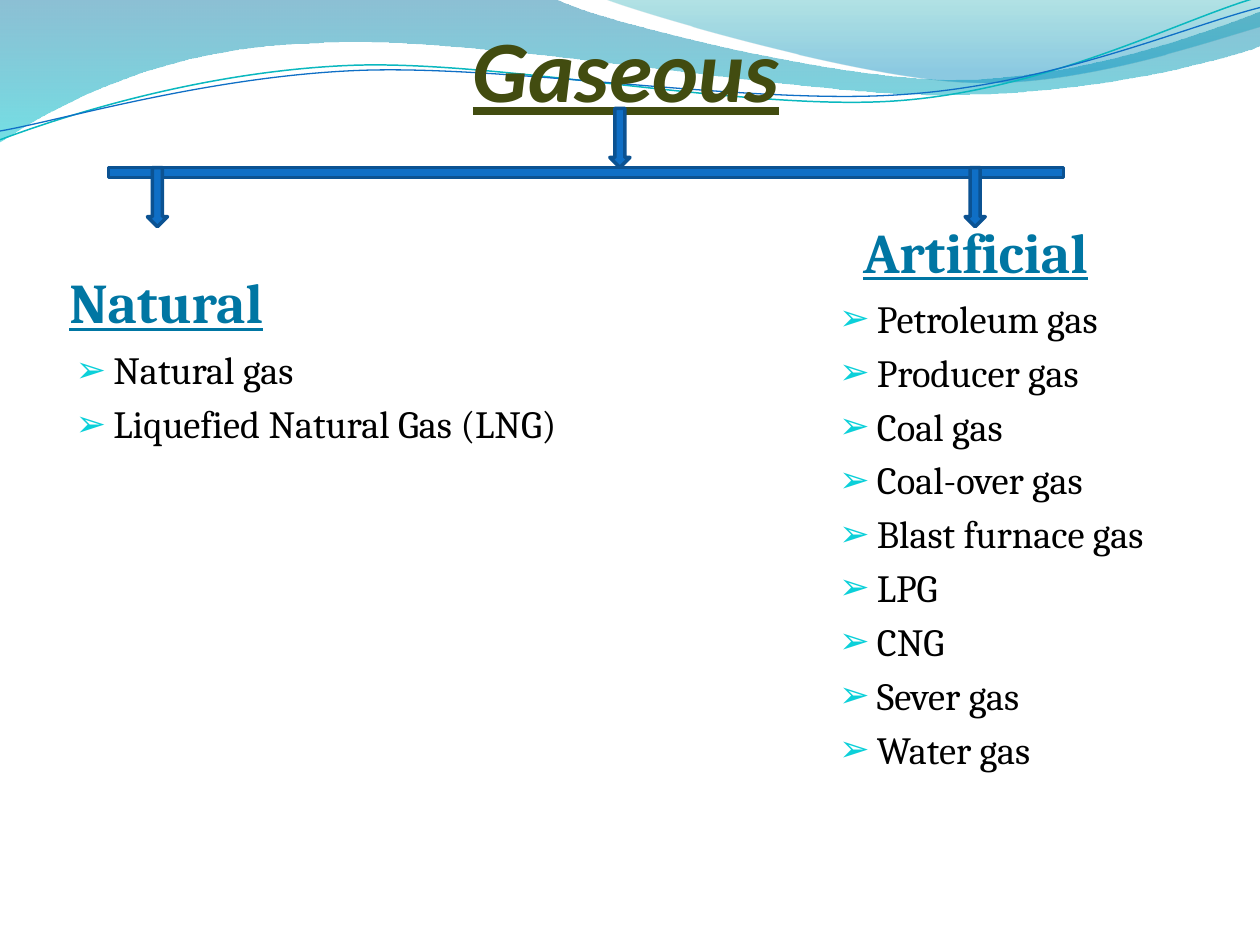
from dataclasses import dataclass

from lxml import etree
from pptx import Presentation
from pptx import util as u
from pptx.dml.color import RGBColor
from pptx.enum import shapes, text
from pptx.oxml.ns import qn


@dataclass(frozen=True)
class Theme:
    """Colours, fonts and type sizes of the slide."""
    title: str = "424C10"
    heading: str = "0076A3"
    body: str = "000000"
    bullet: str = "0BD0D9"
    bar: str = "0F6FC6"
    bar_edge: str = "0B5292"
    teal: str = "0AB8BF"
    title_font: str = "Calibri"
    body_font: str = "Cambria"
    title_size: float = 50
    heading_size: float = 32
    body_size: float = 22
    edge_width: float = 2


@dataclass(frozen=True)
class Box:
    """A region in grid columns and rows."""
    left: float
    top: float
    width: float
    height: float


THEME = Theme()
COLUMNS, ROWS = 10, 7.5
SLIDE_WIDTH, SLIDE_HEIGHT = u.Inches(10), u.Inches(7.5)
COLUMN, ROW = SLIDE_WIDTH / COLUMNS, SLIDE_HEIGHT / ROWS

GRADIENT_WAVES = [
    ([("0074A1", 45, 0), ("00C6CF", 55, 1)], (0, 0), [
        [(4.4, -0.01)],
        [(4.76, 0.17), (6.64, 0.63), (7.58, 0.63)],
        [(8.53, 0.63), (9.58, 0.26), (10, 0.09)],
        [(10.01, 0.36)],
        [(9.83, 0.44), (8.7, 0.76), (7.46, 0.75)],
        [(6.22, 0.75), (3.82, 0.28), (2.57, 0.34)],
        [(1.29, 0.36), (0.46, 0.83), (-0.01, 1.13)]]),
    ([("00A1A9", 30, 0), ("008BBF", 45, 0.8)], (4.79, -0.01), [
        [(5.09, 0.11), (6.82, 0.62), (7.69, 0.65)],
        [(8.56, 0.69), (9.61, 0.32), (10, 0.21)],
        [(10, 0)]]),
]
LINE_WAVES = [
    (THEME.teal, 0.85, (0, 1.11), [
        [(0.48, 0.93), (1.58, 0.57), (2.77, 0.52)],
        [(3.95, 0.47), (5.93, 0.89), (7.13, 0.8)],
        [(8.33, 0.71), (9.38, 0.15), (9.98, -0.02)]]),
    (THEME.bar, 0.75, (0, 1.04), [
        [(0.47, 0.96), (1.64, 0.61), (2.83, 0.56)],
        [(4.03, 0.51), (5.97, 0.84), (7.17, 0.75)],
        [(8.36, 0.67), (9.41, 0.21), (10, 0.06)]]),
]


def place(shape, box):
    """Put a shape on the grid."""
    shape.left, shape.width = (round(v * COLUMN) for v in (box.left, box.width))
    shape.top, shape.height = (round(v * ROW) for v in (box.top, box.height))


def bend(wave, segments):
    """Join each run of three points into one cubic curve."""
    lines = iter(list(wave.element.iter(qn("a:lnTo"))))
    for segment in segments:
        parts = [next(lines) for _ in segment]
        if len(parts) == 3:
            curve = etree.Element(qn("a:cubicBezTo"))
            parts[0].addprevious(curve)
            for part in parts:
                curve.append(part[0])
                part.getparent().remove(part)


def add_wave(slide, number, start, segments, close):
    """Draw one wave and move it to the back of the slide master."""
    points = [(round(x * COLUMN), round(y * ROW))
              for x, y in [start, *sum(segments, [])]]
    builder = slide.shapes.build_freeform(*points[0])
    builder.add_line_segments(points[1:], close=close)
    wave = builder.convert_to_shape()
    bend(wave, segments)
    wave.shadow.inherit = False
    wave.name = f"Wave {number}"
    wave.element.nvSpPr.cNvPr.set("id", str(20 + number))
    master = slide.slide_layout.slide_master
    master.placeholders[0].element.addprevious(wave.element)
    return wave


def add_waves(slide):
    """Draw the header band of shaded waves and thin lines."""
    for number, (stops, start, segments) in enumerate(GRADIENT_WAVES, 1):
        wave = add_wave(slide, number, start, segments, True)
        wave.line.fill.background()
        wave.fill.gradient()
        wave.fill.gradient_angle = 270
        for stop, (color, _, position) in zip(wave.fill.gradient_stops, stops):
            stop.color.rgb = RGBColor.from_string(color)
            stop.position = position
        for color, (_, opacity, _) in zip(wave.element.iter(qn("a:srgbClr")), stops):
            etree.SubElement(color, qn("a:alpha"), val=str(opacity * 1000))
    for number, (color, width, start, segments) in enumerate(LINE_WAVES, 3):
        wave = add_wave(slide, number, start, segments, False)
        wave.fill.background()
        wave.line.color.rgb = RGBColor.from_string(color)
        wave.line.width = u.Pt(width)


def write(shape, lines, insets, anchor, size, font, color, **emphasis):
    """Fill a placeholder with one run per paragraph and return the paragraphs."""
    frame = shape.text_frame
    frame.word_wrap = True
    frame.auto_size = text.MSO_AUTO_SIZE.NONE
    frame.vertical_anchor = anchor
    (frame.margin_left, frame.margin_top,
     frame.margin_right, frame.margin_bottom) = map(u.Inches, insets)
    for index, line in enumerate(lines):
        paragraph = frame.add_paragraph() if index else frame.paragraphs[0]
        run = paragraph.add_run()
        run.text = line
        run.font.size, run.font.name = u.Pt(size), font
        run.font.color.rgb = RGBColor.from_string(color)
        for name, value in emphasis.items():
            setattr(run.font, name, value)
    return frame.paragraphs


def add_bullet(paragraph):
    """Give a paragraph an arrowhead bullet with a hanging indent."""
    properties = paragraph._p.get_or_add_pPr()
    properties.set("marL", str(u.Inches(0.3)))
    properties.set("indent", str(-u.Inches(0.3)))
    color = etree.SubElement(properties, qn("a:buClr"))
    etree.SubElement(color, qn("a:srgbClr"), val=THEME.bullet)
    etree.SubElement(properties, qn("a:buSzPct"), val="95000")
    etree.SubElement(properties, qn("a:buChar"), char="➢")


def fill_title(slide, box, title):
    """Set the underlined slide title."""
    place(slide.shapes.title, box)
    paragraphs = write(slide.shapes.title, [title], (0, 0.05, 0, 0),
                       text.MSO_ANCHOR.BOTTOM, THEME.title_size, THEME.title_font,
                       THEME.title, bold=True, italic=True, underline=True)
    paragraphs[0].alignment = text.PP_ALIGN.CENTER


def fill_branch(slide, first, box, heading, items, heading_height, heading_shift=0):
    """Set a heading and the bulleted list below it."""
    header, body = slide.placeholders[first], slide.placeholders[first + 1]
    place(header, Box(box.left + heading_shift, box.top, box.width, heading_height))
    place(body, Box(box.left, box.top + heading_height, box.width,
                    box.height - heading_height))
    write(header, [heading], (0.05, 0, 0.05, 0), text.MSO_ANCHOR.MIDDLE,
          THEME.heading_size, THEME.body_font, THEME.heading, bold=True, underline=True)
    for paragraph in write(body, items, (0.1, 0, 0.1, 0.05), text.MSO_ANCHOR.TOP,
                           THEME.body_size, THEME.body_font, THEME.body):
        add_bullet(paragraph)


def add_tree(slide, box, bar_height=0.08, arrow_width=0.16):
    """Draw the bar, the two arrows below it and the arrow from the title."""
    arrow_height = box.height / 2
    middle = box.top + arrow_height
    kinds = shapes.MSO_SHAPE
    parts = [(kinds.RECTANGLE, Box(box.left, middle, box.width, bar_height))]
    for offset, top in ((0.31, middle), (6.8, middle), (3.98, box.top)):
        parts.append((kinds.DOWN_ARROW,
                      Box(box.left + offset, top, arrow_width, arrow_height)))
    for kind, area in parts:
        shape = slide.shapes.add_shape(kind, 0, 0, 0, 0)
        place(shape, area)
        shape.shadow.inherit = False
        shape.fill.solid()
        shape.fill.fore_color.rgb = RGBColor.from_string(THEME.bar)
        shape.line.color.rgb = RGBColor.from_string(THEME.bar_edge)
        shape.line.width = u.Pt(THEME.edge_width)


def main():
    """Build and save the slide."""
    presentation = Presentation()
    presentation.slide_width, presentation.slide_height = SLIDE_WIDTH, SLIDE_HEIGHT
    slide = presentation.slides.add_slide(presentation.slide_layouts.get_by_name("Comparison"))
    add_waves(slide)
    fill_title(slide, Box(0.47, 0, 9, 0.95), "Gaseous")
    fill_branch(slide, 1, Box(0.5, 2.03, 4.42, 4.93), "Natural",
                ["Natural gas", "Liquefied Natural Gas (LNG)"], 0.72)
    fill_branch(slide, 3, Box(6.56, 1.64, 4.42, 5.02), "Artificial",
                ["Petroleum gas", "Producer gas", "Coal gas", "Coal-over gas",
                 "Blast furnace gas", "LPG", "CNG", "Sever gas", "Water gas"], 0.7, 0.24)
    add_tree(slide, Box(0.86, 0.86, 7.58, 0.94))
    presentation.save("out.pptx")


if __name__ == "__main__":
    main()
